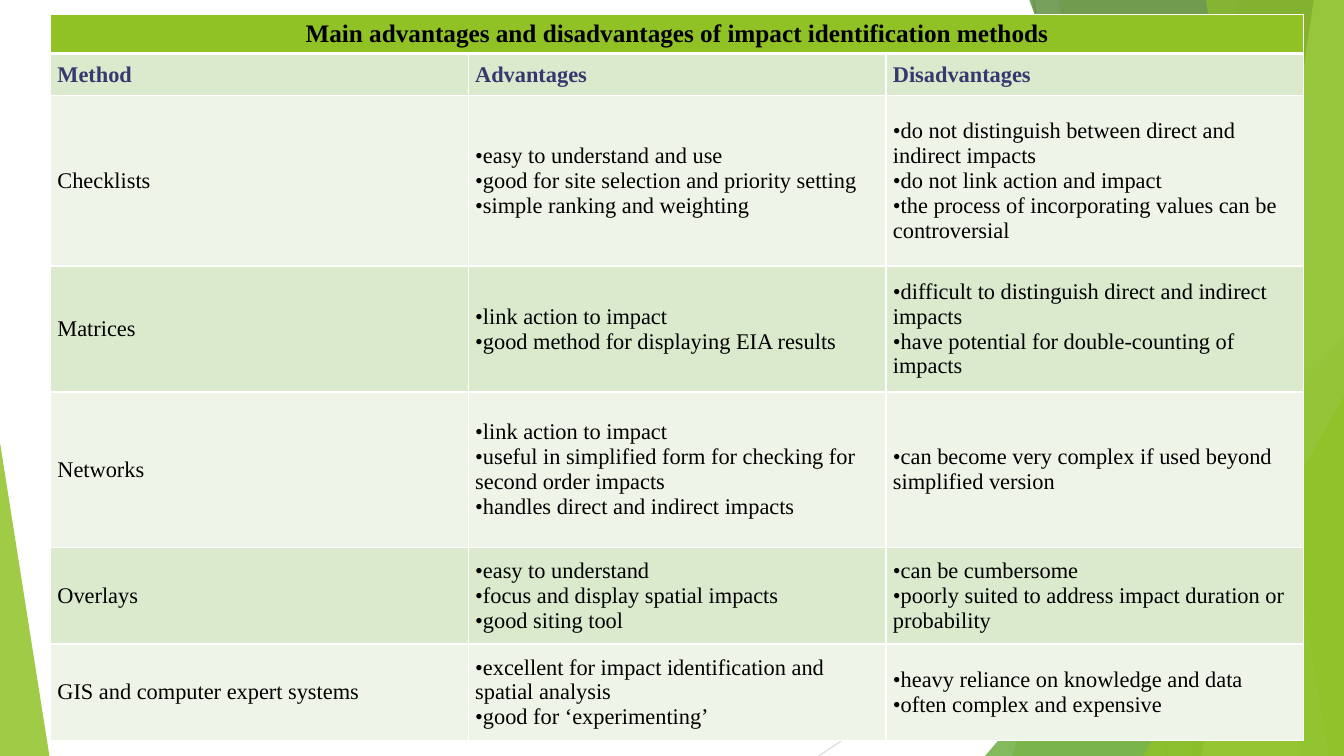
from dataclasses import dataclass

from lxml.etree import SubElement
from pptx import Presentation
from pptx.dml.color import RGBColor
from pptx.enum.shapes import MSO_CONNECTOR as Connector, MSO_SHAPE as Preset
from pptx.enum.text import MSO_ANCHOR as Anchor, PP_ALIGN as Align
from pptx.oxml import parse_xml
from pptx.oxml.ns import nsdecls, qn
from pptx.util import Inches, Pt

WIDTH, HEIGHT = 13.33, 7.5


@dataclass(frozen=True)
class Theme:
    """Fonts, type sizes and colours of the slide."""
    font: str = "Times New Roman"
    title_size: int = 18
    body_size: int = 16
    black: str = "000000"
    white: str = "FFFFFF"
    navy: str = "38386F"
    green: str = "90C226"
    mid_green: str = "54A021"
    dark_green: str = "3F7819"
    lime: str = "C0E474"
    band_dark: str = "DBE9CD"
    band_light: str = "EEF4E8"
    grey: str = "BFBFBF"
    light_grey: str = "D9D9D9"


class SlideBuilder:
    """Draws styled elements on one slide."""

    def __init__(self, slide, theme):
        """Keep the slide and its theme."""
        self.slide, self.theme = slide, theme

    def line(self, start, end, color):
        """Draw a thin straight line."""
        connector = self.slide.shapes.add_connector(
            Connector.STRAIGHT, *map(Inches, start + end))
        connector.line.color.rgb = RGBColor.from_string(color)
        connector.line.width = Pt(0.75)
        SubElement(connector._element.spPr, qn("a:effectLst"))

    def paint(self, shape, color, opacity):
        """Give a shape a translucent fill without outline or shadow."""
        shape.shadow.inherit = False
        shape.line.fill.background()
        shape.fill.solid()
        shape.fill.fore_color.rgb = RGBColor.from_string(color)
        color_element = shape._element.spPr.find(qn("a:solidFill"))[0]
        SubElement(color_element, qn("a:alpha"), val=str(opacity * 1000))

    def facet(self, top, bottom, color, opacity):
        """Draw a slanted panel reaching to the right edge."""
        points = [(WIDTH, 0), (WIDTH, HEIGHT), (bottom, HEIGHT)]
        builder = self.slide.shapes.build_freeform(Inches(top), 0)
        builder.add_line_segments([(Inches(x), Inches(y)) for x, y in points])
        self.paint(builder.convert_to_shape(), color, opacity)

    def triangle(self, left, top, width, apex, color, opacity):
        """Draw a triangle standing on the bottom edge."""
        shape = self.slide.shapes.add_shape(
            Preset.ISOSCELES_TRIANGLE,
            *map(Inches, (left, top, width, HEIGHT - top)))
        shape.adjustments[0] = apex
        self.paint(shape, color, opacity)

    def table(self, left, top, width, columns, row_heights):
        """Add an empty table with equal columns."""
        table = self.slide.shapes.add_table(
            len(row_heights), columns, Inches(left), Inches(top),
            Inches(width), Inches(sum(row_heights))).table
        for column in table.columns:
            column.width = Inches(width / columns)
        for row, height in zip(table.rows, row_heights):
            row.height = Inches(height)
        return table

    def borders(self, cell, top=1, bottom=1):
        """Set white borders on all sides of a cell."""
        properties = cell._tc.get_or_add_tcPr()
        widths = {"lnL": 1, "lnR": 1, "lnT": top, "lnB": bottom}
        for index, (side, width) in enumerate(widths.items()):
            properties.insert(index, parse_xml(
                f'<a:{side} {nsdecls("a")} w="{Pt(width)}"><a:solidFill>'
                f'<a:srgbClr val="{self.theme.white}"/></a:solidFill></a:{side}>'))

    def bullet(self, paragraph):
        """Put a bullet in the text font before a paragraph."""
        properties = paragraph._p.get_or_add_pPr()
        SubElement(properties, qn("a:buFont"), typeface=self.theme.font)
        SubElement(properties, qn("a:buChar"), char="•")

    def cell(self, cell, lines, fill, size=None, color=None, bold=False,
             align=Align.LEFT, bullets=False, margin=0.07):
        """Fill a cell with one paragraph for each line."""
        cell.fill.solid()
        cell.fill.fore_color.rgb = RGBColor.from_string(fill)
        cell.vertical_anchor = Anchor.MIDDLE
        if margin is not None:
            cell.margin_left = cell.margin_right = Inches(margin)
            cell.margin_top = cell.margin_bottom = Inches(margin)
        frame = cell.text_frame
        for index, text in enumerate(lines):
            paragraph = frame.add_paragraph() if index else frame.paragraphs[0]
            paragraph.alignment = align
            if bullets:
                self.bullet(paragraph)
            run = paragraph.add_run()
            run.text = text
            run.font.name = self.theme.font
            run.font.size = Pt(size or self.theme.body_size)
            run.font.bold = bold
            run.font.color.rgb = RGBColor.from_string(color or self.theme.black)


TITLE = "Main advantages and disadvantages of impact identification methods"
HEADINGS = ["Method", "Advantages", "Disadvantages"]
METHODS = [
    ("Checklists", 1.69,
     ["easy to understand and use",
      "good for site selection and priority setting",
      "simple ranking and weighting"],
     ["do not distinguish between direct and indirect impacts",
      "do not link action and impact",
      "the process of incorporating values can be controversial"]),
    ("Matrices", 1.25,
     ["link action to impact", "good method for displaying EIA results"],
     ["difficult to distinguish direct and indirect impacts",
      "have potential for double-counting of impacts"]),
    ("Networks", 1.54,
     ["link action to impact",
      "useful in simplified form for checking for second order impacts",
      "handles direct and indirect impacts"],
     ["can become very complex if used beyond simplified version"]),
    ("Overlays", 0.96,
     ["easy to understand", "focus and display spatial impacts",
      "good siting tool"],
     ["can be cumbersome",
      "poorly suited to address impact duration or probability"]),
    ("GIS and computer expert systems", 0.96,
     ["excellent for impact identification and spatial analysis",
      "good for ‘experimenting’"],
     ["heavy reliance on knowledge and data", "often complex and expensive"]),
]


def draw_background(builder):
    """Draw the green facets around the table."""
    theme = builder.theme
    builder.line((10.25, 0), (11.58, HEIGHT), theme.grey)
    builder.line((WIDTH, 4.03), (8.12, HEIGHT), theme.light_grey)
    builder.facet(12.28, 10.04, theme.green, 30)
    builder.facet(10.5, 11.83, theme.green, 20)
    builder.triangle(9.77, 3.33, 3.56, 1, theme.mid_green, 72)
    builder.facet(10.21, 12.91, theme.dark_green, 70)
    builder.facet(13.03, 11.92, theme.lime, 70)
    builder.facet(11.96, 13.18, theme.green, 65)
    builder.triangle(11.34, 3.93, 1.99, 1, theme.green, 80)
    builder.triangle(0, 4.39, 0.49, 0, theme.green, 85)


def draw_methods(builder):
    """Draw the comparison table."""
    theme = builder.theme
    heights = [0.39, 0.42] + [height for _, height, _, _ in METHODS]
    table = builder.table(0.5, 0.14, 12.43, len(HEADINGS), heights)
    for row in range(len(heights)):
        for column in range(len(HEADINGS)):
            builder.borders(table.cell(row, column), top=3 if row == 1 else 1,
                            bottom=3 if row == 0 else 1)
    table.cell(0, 0).merge(table.cell(0, len(HEADINGS) - 1))
    builder.cell(table.cell(0, 0), [TITLE], theme.green, size=theme.title_size,
                 bold=True, align=Align.CENTER, margin=None)
    for column, heading in enumerate(HEADINGS):
        builder.cell(table.cell(1, column), [heading], theme.band_dark,
                     color=theme.navy, bold=True)
    for row, (method, _, advantages, disadvantages) in enumerate(METHODS, 2):
        fill = theme.band_dark if row % 2 else theme.band_light
        for column, lines in enumerate([[method], advantages, disadvantages]):
            builder.cell(table.cell(row, column), lines, fill, bullets=column > 0)


def main():
    """Build and save the presentation."""
    presentation = Presentation()
    presentation.slide_width = Inches(WIDTH)
    presentation.slide_height = Inches(HEIGHT)
    slide = presentation.slides.add_slide(presentation.slide_layouts[6])
    builder = SlideBuilder(slide, Theme())
    draw_background(builder)
    draw_methods(builder)
    presentation.save("out.pptx")


if __name__ == "__main__":
    main()
